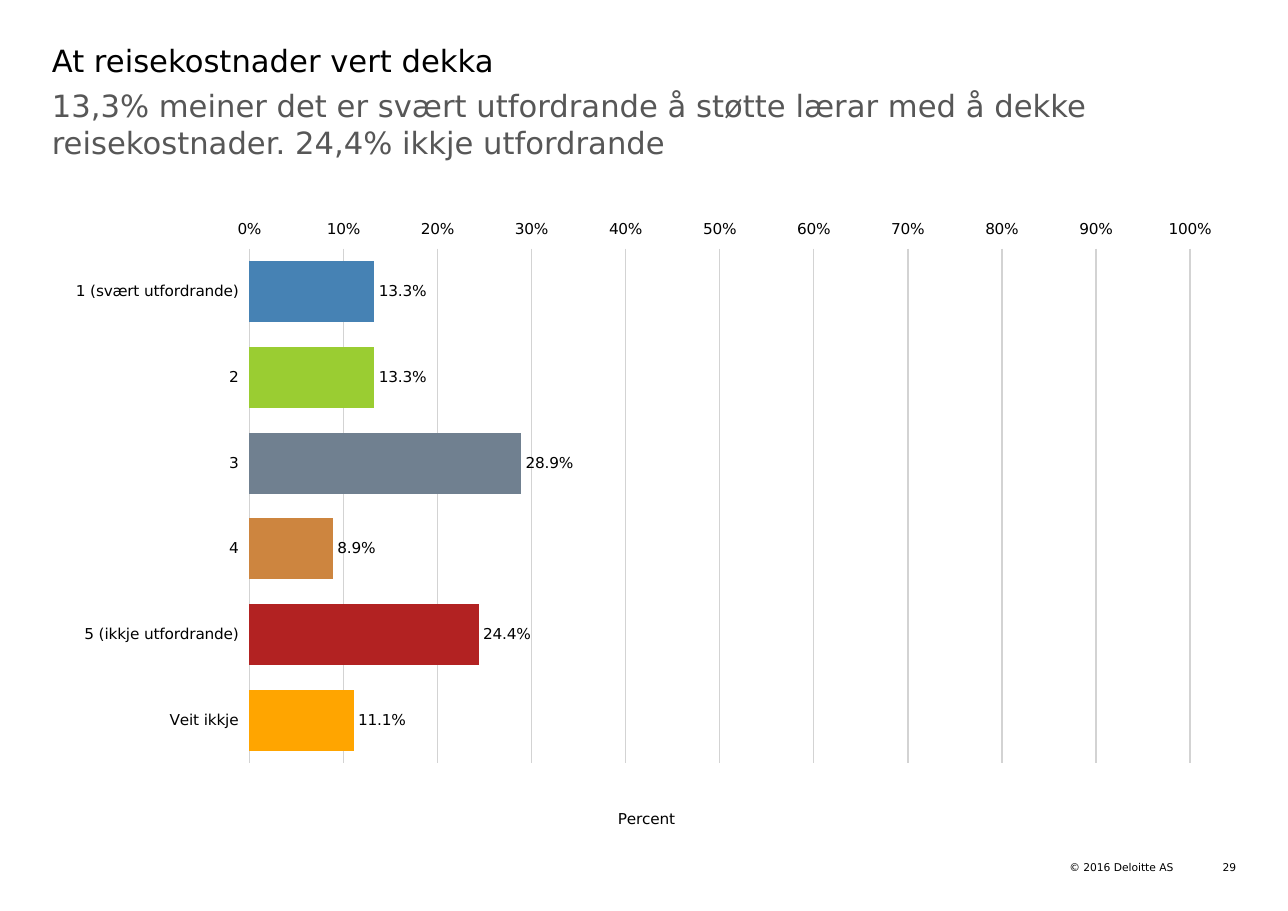
from typing import NamedTuple

from lxml.etree import SubElement
from pptx import Presentation
from pptx.chart.data import CategoryChartData as ChartData
from pptx.dml.color import RGBColor
from pptx.enum.chart import XL_AXIS_CROSSES as Cross
from pptx.enum.chart import XL_CHART_TYPE as Kind
from pptx.enum.chart import XL_LABEL_POSITION as Spot
from pptx.enum.chart import XL_TICK_MARK as Tick
from pptx.enum.text import MSO_ANCHOR as Anchor
from pptx.enum.text import PP_ALIGN as Align
from pptx.oxml import parse_xml
from pptx.oxml.ns import nsdecls, qn
from pptx.util import Inches, Pt

FONT = "DejaVu Sans"
BLACK = RGBColor(0x00, 0x00, 0x00)
GREY = RGBColor(0x57, 0x57, 0x57)
SILVER = RGBColor(0xD3, 0xD3, 0xD3)
BLUE = RGBColor(0x46, 0x82, 0xB4)
GREEN = RGBColor(0x9A, 0xCD, 0x32)
SLATE = RGBColor(0x70, 0x80, 0x90)
BROWN = RGBColor(0xCD, 0x85, 0x3F)
RED = RGBColor(0xB2, 0x22, 0x22)
AMBER = RGBColor(0xFF, 0xA5, 0x00)

WIDE, HIGH = Inches(11.69), Inches(8.27)
LEFT, SPAN = 4.02, 91.87


class Area(NamedTuple):
    """A place in percent of the slide's width and height."""
    left: float
    top: float
    width: float
    height: float

    def emu(self) -> list[int]:
        return [round(part * full / 100)
                for part, full in zip(self, (WIDE, HIGH, WIDE, HIGH))]


class Label(NamedTuple):
    text: str
    area: Area
    size: int
    color: RGBColor = BLACK
    align: Align = Align.LEFT
    anchor: Anchor = Anchor.TOP
    wrap: bool = True


class Bar(NamedTuple):
    name: str
    share: float
    color: RGBColor


LABELS = [
    Label("At reisekostnader vert dekka", Area(LEFT, 4.6, SPAN, 4.84), 20),
    Label("13,3% meiner det er svært utfordrande å støtte lærar med å dekke "
          "reisekostnader. 24,4% ikkje utfordrande",
          Area(LEFT, 9.55, SPAN, 11), 20, GREY),
    Label("© 2016 Deloitte AS", Area(82.81, 94.44, 8.3, 1.45), 7,
          align=Align.RIGHT, anchor=Anchor.MIDDLE, wrap=False),
    Label("29", Area(93.41, 94.44, 2.57, 1.45), 7, align=Align.RIGHT),
]
BARS = [
    Bar("1 (svært utfordrande)", 0.133, BLUE),
    Bar("2", 0.133, GREEN),
    Bar("3", 0.289, SLATE),
    Bar("4", 0.089, BROWN),
    Bar("5 (ikkje utfordrande)", 0.244, RED),
    Bar("Veit ikkje", 0.111, AMBER),
]
CHART = Area(LEFT, 24.3, SPAN, 68.68)
PLOT = {"layoutTarget": "inner", "xMode": "edge", "yMode": "edge",
        "x": 16.7, "y": 2, "w": 79.5, "h": 84.3}
TITLE = {"xMode": "edge", "yMode": "edge", "x": 47.6, "y": 93.4}


def write(slide, label: Label) -> None:
    frame = slide.shapes.add_textbox(*label.area.emu()).text_frame
    frame.margin_left = frame.margin_right = 0
    frame.margin_top = frame.margin_bottom = 0
    frame.word_wrap = label.wrap
    frame.vertical_anchor = label.anchor
    para = frame.paragraphs[0]
    para.text = label.text
    para.alignment = label.align
    style(para.font, label.size, label.color)


def style(font, size: int, color: RGBColor = BLACK) -> None:
    font.name, font.size, font.bold = FONT, Pt(size), False
    font.color.rgb = color


def place(part, rule: dict) -> None:
    """Fix a chart part's position, in percent of the chart."""
    layout = part.find(qn("c:layout"))
    if layout is None:
        layout = parse_xml(f"<c:layout {nsdecls('c')}/>")
        part.insert(0, layout)
    manual = SubElement(layout, qn("c:manualLayout"))
    for key, val in rule.items():
        val = val if isinstance(val, str) else f"{val / 100:.3f}"
        SubElement(manual, qn(f"c:{key}")).set("val", val)


def set_axes(chart) -> None:
    cats, vals = chart.category_axis, chart.value_axis
    for axis in (cats, vals):
        axis.major_tick_mark = Tick.CROSS
        axis.format.line.fill.background()
        style(axis.tick_labels.font, 10)
    cats.reverse_order = True
    cats.crosses = Cross.MAXIMUM
    cats.has_major_gridlines = False

    vals.minimum_scale, vals.maximum_scale, vals.major_unit = 0, 1, 0.1
    vals.tick_labels.number_format = "0%"
    vals.tick_labels.number_format_is_linked = False
    vals.has_major_gridlines = True
    grid = vals.major_gridlines.format.line
    grid.color.rgb, grid.width = SILVER, Pt(1)
    para = vals.axis_title.text_frame.paragraphs[0]
    para.text = "Percent"
    style(para.font, 10)
    place(vals.axis_title._element, TITLE)


def set_bars(plot) -> None:
    plot.gap_width = 40
    plot.vary_by_categories = False
    for index, bar in enumerate(BARS):
        look = plot.series[0].points[index].format
        look.fill.solid()
        look.fill.fore_color.rgb = bar.color
        look.line.fill.background()
    plot.has_data_labels = True
    tags = plot.data_labels
    tags.show_value = True
    tags.number_format, tags.number_format_is_linked = "0.0%", False
    tags.position = Spot.OUTSIDE_END
    style(tags.font, 10)


def add_bars(slide) -> None:
    data = ChartData(number_format="0.0%")
    data.categories = [bar.name for bar in BARS]
    data.add_series("Series 1", [bar.share for bar in BARS])
    chart = slide.shapes.add_chart(
        Kind.BAR_CLUSTERED, *CHART.emu(), data).chart
    chart.has_title = chart.has_legend = False
    style(chart.font, 18)
    set_axes(chart)
    set_bars(chart.plots[0])
    place(chart._chartSpace.chart.plotArea, PLOT)


def main() -> None:
    deck = Presentation()
    deck.slide_width, deck.slide_height = WIDE, HIGH
    slide = deck.slides.add_slide(deck.slide_layouts[6])
    for label in LABELS:
        write(slide, label)
    add_bars(slide)
    deck.save("out.pptx")


if __name__ == "__main__":
    main()
